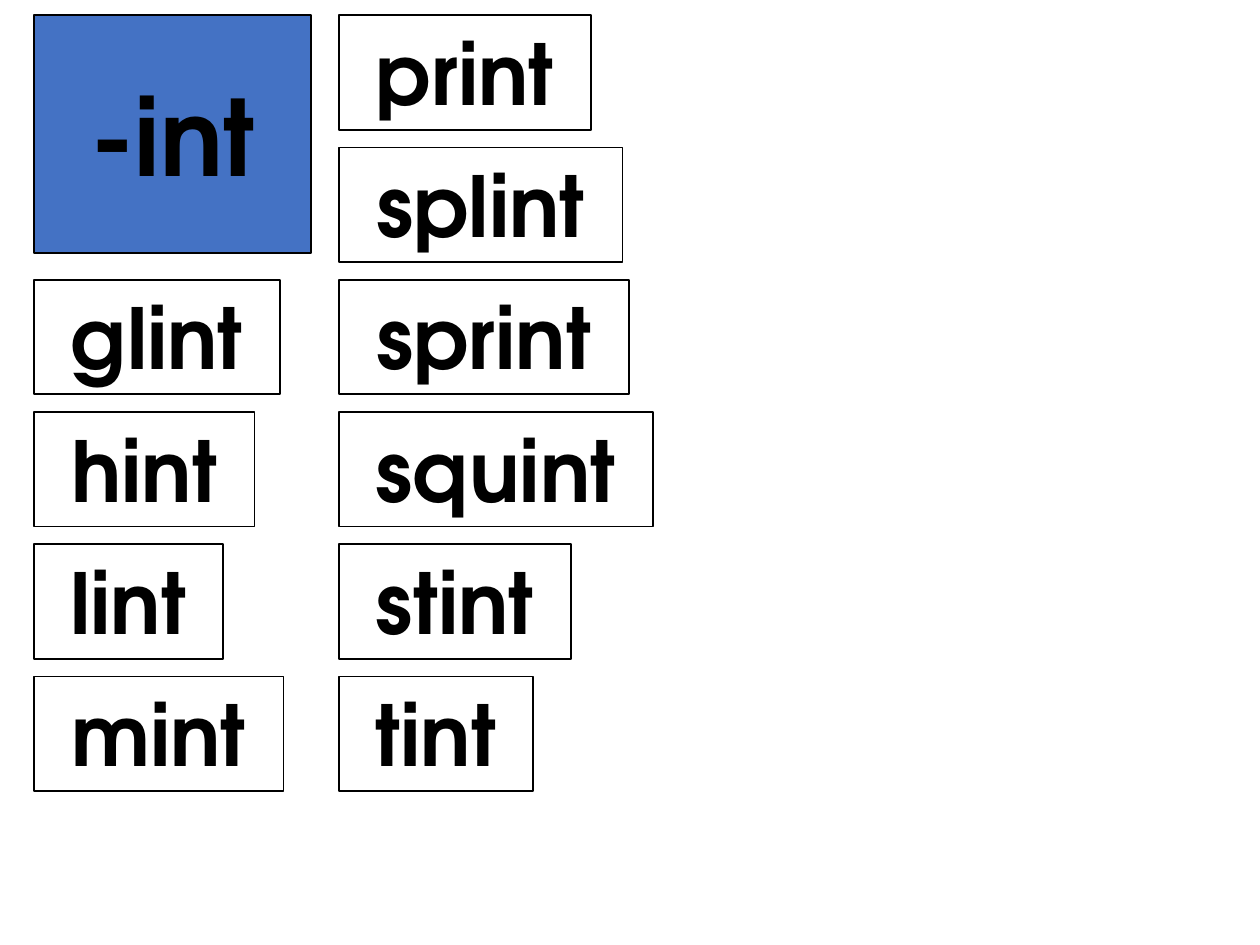
"""Build a word-family slide for the -int ending."""
from pptx import Presentation
from pptx.dml.color import RGBColor
from pptx.enum.shapes import MSO_SHAPE as Shape
from pptx.enum.text import MSO_ANCHOR as Anchor, MSO_AUTO_SIZE as AutoSize, PP_ALIGN as Align
from pptx.util import Inches, Pt


def color(hex_code):
    return RGBColor.from_string(hex_code)


def style_card(card, text, fill, size, anchor, wrap):
    card.fill.solid()
    card.fill.fore_color.rgb = color(fill)
    card.line.color.rgb = color("000000")
    card.line.width = Pt(1)
    frame = card.text_frame
    frame.text = text
    frame.word_wrap = wrap
    frame.auto_size = AutoSize.NONE
    frame.vertical_anchor = anchor
    paragraph = frame.paragraphs[0]
    paragraph.alignment = Align.CENTER
    font = paragraph.runs[0].font
    font.name = "TeX Gyre Adventor"
    font.size = Pt(size)
    font.bold = True
    font.color.rgb = color("000000")


deck = Presentation()
deck.slide_width, deck.slide_height = Inches(10), Inches(7.5)
slide = deck.slides.add_slide(deck.slide_layouts[5])

TOP, ROW_STEP, CARD_HEIGHT = 0.12, 1.05, 0.91
LEFT_COLUMN, RIGHT_COLUMN = 0.27, 2.69

ending = slide.shapes.title
ending.left, ending.top = Inches(LEFT_COLUMN), Inches(TOP)
ending.width, ending.height = Inches(2.2), Inches(1.89)
style_card(ending, "-int", "4472C4", 60, Anchor.MIDDLE, True)

columns = [
    (LEFT_COLUMN, 2, [("glint", 1.95), ("hint", 1.75), ("lint", 1.5), ("mint", 1.98)]),
    (RIGHT_COLUMN, 0, [("print", 2), ("splint", 2.25), ("sprint", 2.3),
                       ("squint", 2.49), ("stint", 1.84), ("tint", 1.54)]),
]
for left, first_row, words in columns:
    for row, (word, width) in enumerate(words, first_row):
        word_card = slide.shapes.add_shape(
            Shape.RECTANGLE, Inches(left), Inches(TOP + row * ROW_STEP),
            Inches(width), Inches(CARD_HEIGHT))
        word_card.shadow.inherit = False
        style_card(word_card, word, "FFFFFF", 48, Anchor.TOP, False)

deck.save("out.pptx")
